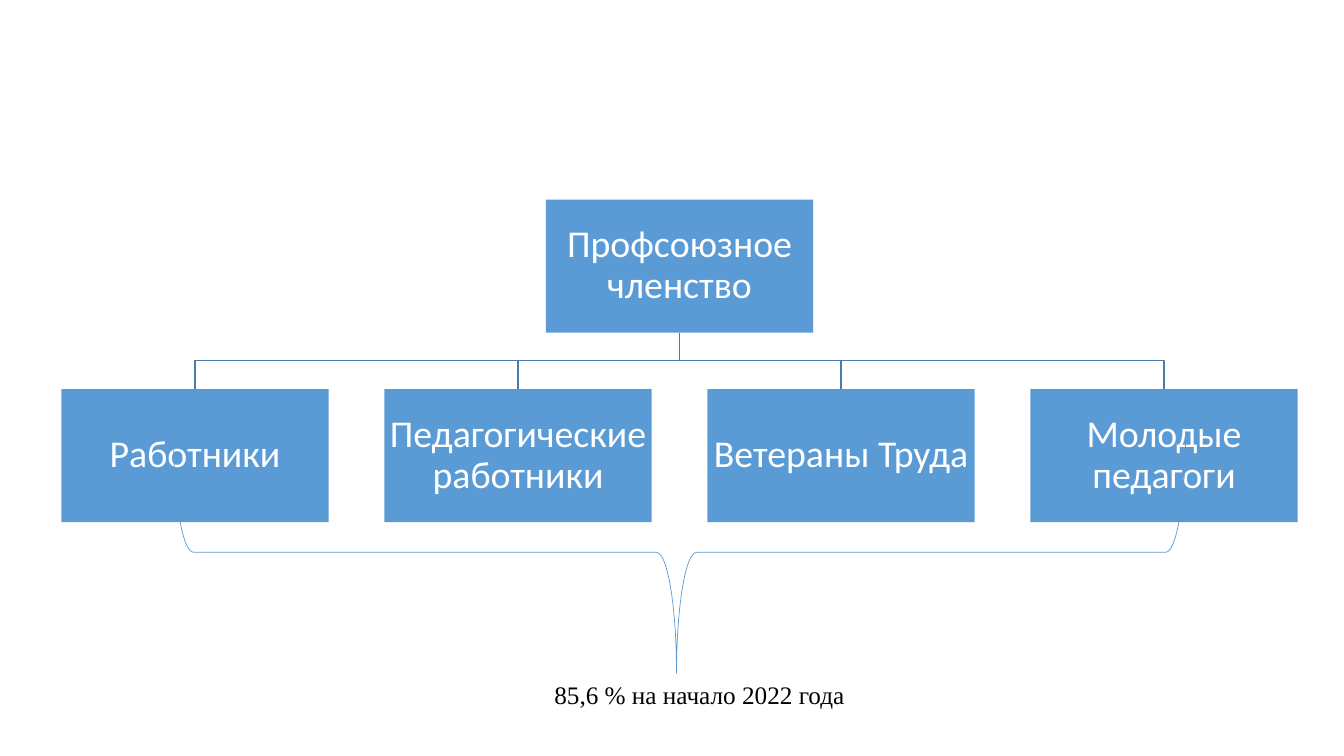
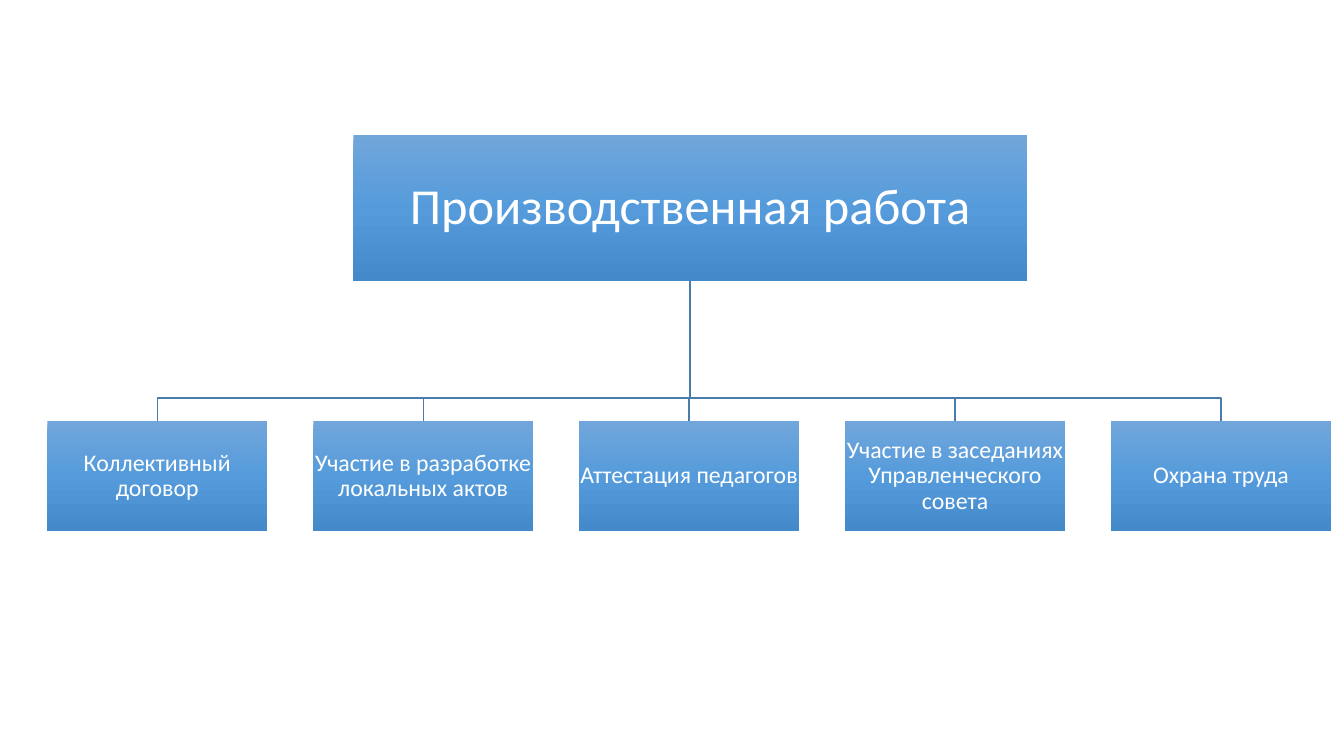
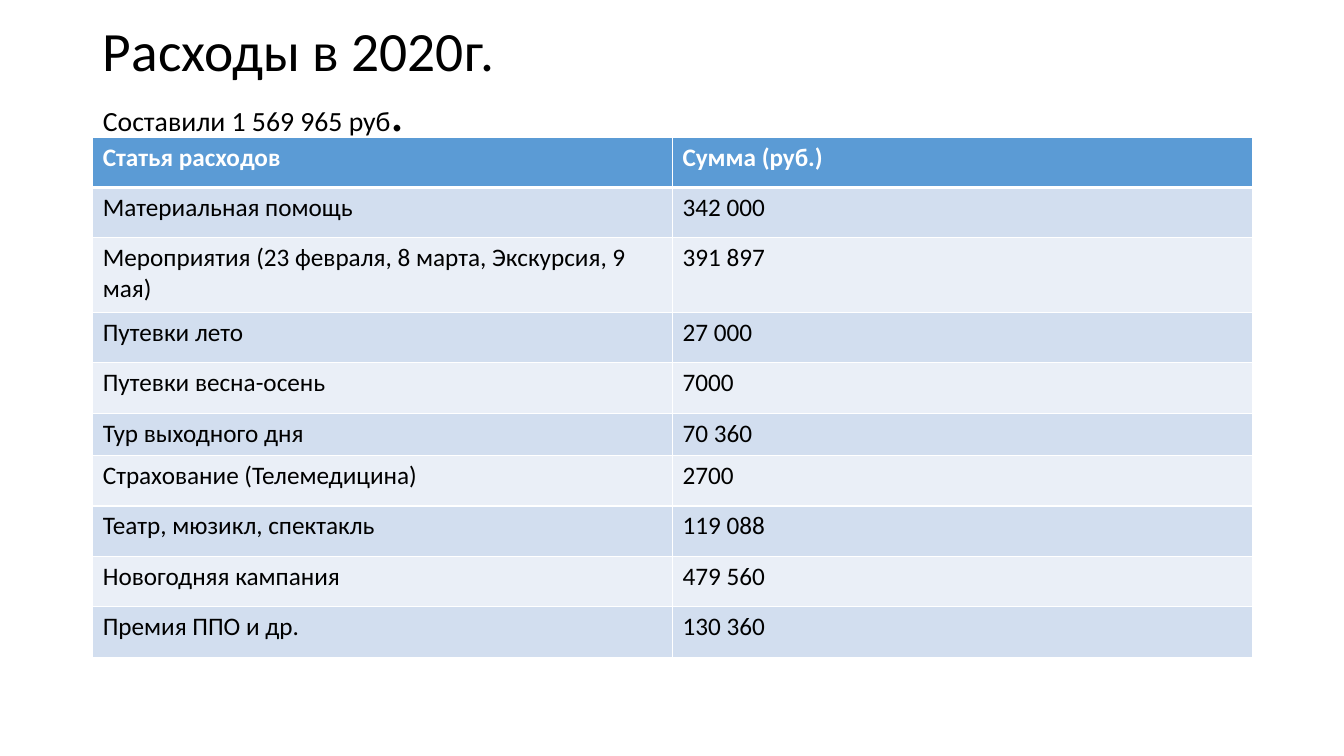
from lxml import etree
from pptx import Presentation
from pptx import util as u
from pptx.dml import color
from pptx.enum import shapes, text
from pptx.oxml import ns

# Shared style
FONT = "Calibri"
SERIF = "Times New Roman"
BLUE, LINE, WHITE, BLACK = "5B9BD5", "497CAB", "FFFFFF", "000000"
BANDS = ("EAEFF7", "D2DEEF")
GRADIENT = ((0, "71A6DB"), (50, "559BDB"), (100, "448ACA"))
TITLE_ONLY, BLANK = 5, 6


def rgb(value):
    return color.RGBColor.from_string(value)


def lengths(*values):
    return [u.Inches(value) for value in values]


def element(parent, tag, **attributes):
    return etree.SubElement(parent, ns.qn(tag), attributes)


def add_text(paragraph, words, size, hex_color=BLACK, font=FONT, bold=False):
    run = paragraph.add_run()
    run.text = words
    run.font.size = u.Pt(size)
    run.font.name = font
    run.font.bold = bold
    run.font.color.rgb = rgb(hex_color)


def set_insets(frame, inset):
    frame.margin_left = frame.margin_right = u.Inches(inset)
    frame.margin_top = frame.margin_bottom = u.Inches(inset)


def fill_gradient(shape, stops):
    """Vertical gradient with any number of stops."""
    shape.fill.gradient()
    shape.fill.gradient_angle = 270
    stop_list = shape.fill._fill._gradFill.find(ns.qn("a:gsLst"))
    for old_stop in list(stop_list):
        stop_list.remove(old_stop)
    for percent, hex_color in stops:
        stop = element(stop_list, "a:gs", pos=str(percent * 1000))
        element(stop, "a:srgbClr", val=hex_color)


def add_node(slide, box, words, size, inset, gradient):
    node = slide.shapes.add_shape(shapes.MSO_SHAPE.RECTANGLE, *lengths(*box))
    node.shadow.inherit = False
    node.line.fill.background()
    if gradient:
        fill_gradient(node, GRADIENT)
    else:
        node.fill.solid()
        node.fill.fore_color.rgb = rgb(BLUE)
    frame = node.text_frame
    frame.word_wrap = True
    frame.vertical_anchor = text.MSO_ANCHOR.MIDDLE
    set_insets(frame, inset)
    paragraph = frame.paragraphs[0]
    paragraph.alignment = text.PP_ALIGN.CENTER
    paragraph.line_spacing = 0.9
    add_text(paragraph, words, size, WHITE)


def add_branch(slide, start, bend_y, end):
    """Open elbow from the root down to one child."""
    points = [start, (start[0], bend_y), (end[0], bend_y), end]
    points = [lengths(*point) for point in points]
    builder = slide.shapes.build_freeform(*points[0], scale=1.0)
    builder.add_line_segments(points[1:], close=False)
    branch = builder.convert_to_shape()
    branch.shadow.inherit = False
    branch.fill.background()
    branch.line.color.rgb = rgb(LINE)
    branch.line.width = u.Pt(1)


def add_tree(slide, box, root, children, root_size, child_size, font_sizes,
             insets, drop, root_shift=0, gradient=False):
    """Root centred at the top of the box, children spread along its bottom."""
    left, top, width, height = box
    root_width, root_height = root_size
    child_width, child_height = child_size
    center = left + width / 2 + root_shift
    child_top = top + height - child_height
    pitch = (width - child_width) / (len(children) - 1)
    child_lefts = [left + index * pitch for index in range(len(children))]

    for child_left in child_lefts:
        add_branch(slide, (center, top + root_height), child_top - drop,
                   (child_left + child_width / 2, child_top))
    add_node(slide, (center - root_width / 2, top, root_width, root_height),
             root, font_sizes[0], insets[0], gradient)
    for child_left, words in zip(child_lefts, children):
        add_node(slide, (child_left, child_top, child_width, child_height),
                 words, font_sizes[1], insets[1], gradient)


def add_summary(slide, box, words):
    """Downward brace with a caption under its tip."""
    left, top, width, height = box
    # The brace is turned by 90 degrees, so its sides are swapped
    brace = slide.shapes.add_shape(
        shapes.MSO_SHAPE.RIGHT_BRACE,
        *lengths(left + (width - height) / 2, top + (height - width) / 2, height, width))
    brace.rotation = 90
    brace.adjustments[0] = 0.083
    brace.adjustments[1] = 0.503
    brace.shadow.inherit = False
    brace.fill.background()
    brace.line.color.rgb = rgb(BLUE)
    brace.line.width = u.Pt(0.5)

    caption = slide.shapes.add_textbox(*lengths(left + 3.68, top + height + 0.01, 6.67, 0.4))
    frame = caption.text_frame
    frame.word_wrap = True
    paragraph = frame.paragraphs[0]
    paragraph.alignment = text.PP_ALIGN.JUSTIFY
    paragraph.space_before = paragraph.space_after = u.Pt(5)
    add_text(paragraph, words, 18, font=SERIF)


def set_title(slide, box, heading, subheading):
    title = slide.shapes.title
    title.left, title.top, title.width, title.height = lengths(*box)
    frame = title.text_frame
    frame.word_wrap = True
    frame.auto_size = text.MSO_AUTO_SIZE.NONE
    frame.vertical_anchor = text.MSO_ANCHOR.MIDDLE
    frame.margin_bottom = u.Inches(0.65)
    paragraph = frame.paragraphs[0]
    paragraph.alignment = text.PP_ALIGN.LEFT
    paragraph.line_spacing = 0.9
    add_text(paragraph, heading, 39.6)
    paragraph.add_line_break()
    add_text(paragraph, subheading, 19.8)
    add_text(paragraph, ".", 39.6)


def set_borders(cell, bottom):
    properties = cell._tc.get_or_add_tcPr()
    for side, points in (("L", 1), ("R", 1), ("T", 1), ("B", bottom)):
        border = element(properties, f"a:ln{side}", w=str(u.Pt(points)))
        element(element(border, "a:solidFill"), "a:srgbClr", val=WHITE)


def add_expenses(slide, box, rows, row_heights):
    columns = len(rows[0])
    table = slide.shapes.add_table(len(rows), columns, *lengths(*box)).table
    for column in table.columns:
        column.width = u.Inches(box[2] / columns)
    for index, (values, height) in enumerate(zip(rows, row_heights)):
        header = index == 0
        table.rows[index].height = u.Inches(height)
        for cell, words in zip(table.rows[index].cells, values):
            set_borders(cell, bottom=3 if header else 1)
            cell.fill.solid()
            cell.fill.fore_color.rgb = rgb(BLUE if header else BANDS[index % 2])
            add_text(cell.text_frame.paragraphs[0], words, 18,
                     WHITE if header else BLACK, bold=header)


def main():
    presentation = Presentation()
    presentation.slide_width, presentation.slide_height = lengths(13.33, 7.5)

    def new_slide(layout):
        return presentation.slides.add_slide(presentation.slide_layouts[layout])

    # Membership
    slide = new_slide(BLANK)
    add_tree(slide, (0.61, 1.98, 12.26, 3.2), "Профсоюзное членство",
             ["Работники", "Педагогические работники", "Ветераны Труда",
              "Молодые педагоги"],
             root_size=(2.65, 1.32), child_size=(2.65, 1.32),
             font_sizes=(27, 27), insets=(0.02, 0.02), drop=0.28)
    add_summary(slide, (1.72, 4.28, 10.04, 2.4), "85,6 % на начало 2022 года")

    # Areas of work
    slide = new_slide(BLANK)
    add_tree(slide, (0.47, 1.34, 12.73, 3.93), "Производственная работа",
             ["Коллективный договор", "Участие в разработке локальных актов",
              "Аттестация педагогов",
              "Участие в заседаниях Управленческого совета", "Охрана труда"],
             root_size=(6.68, 1.45), child_size=(2.18, 1.09),
             font_sizes=(36, 17), insets=(0.03, 0.01), drop=0.23,
             root_shift=0.01, gradient=True)

    # Expenses
    slide = new_slide(TITLE_ONLY)
    set_title(slide, (0.92, 0.4, 11.5, 1.45), "Расходы в 2020г.",
              "Составили 1 569 965 руб")
    rows = [
        ("Статья расходов", "Сумма (руб.)"),
        ("Материальная помощь", "342 000"),
        ("Мероприятия (23 февраля, 8 марта, Экскурсия, 9 мая)", "391 897"),
        ("Путевки лето", "27 000"),
        ("Путевки весна-осень", "7000"),
        ("Тур выходного дня", "70 360"),
        ("Страхование (Телемедицина)", "2700"),
        ("Театр, мюзикл, спектакль", "119 088"),
        ("Новогодняя кампания", "479 560"),
        ("Премия ППО и др.", "130 360"),
    ]
    special_heights = {2: 0.74, 5: 0.42}
    row_heights = [special_heights.get(index, 0.5) for index in range(len(rows))]
    add_expenses(slide, (0.92, 1.36, 11.5, sum(row_heights)), rows, row_heights)

    presentation.save("out.pptx")


if __name__ == "__main__":
    main()
